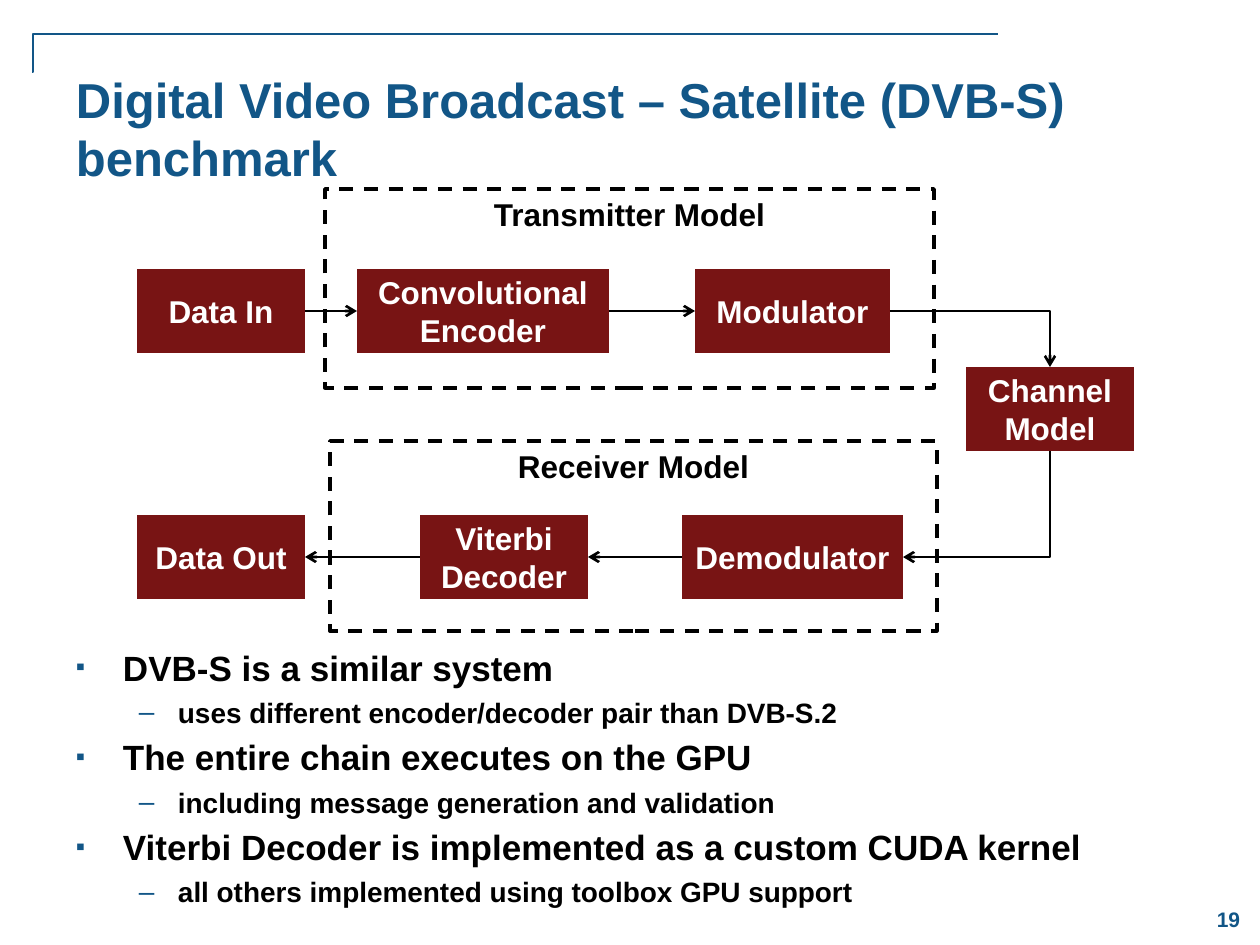
from lxml import etree
from pptx import Presentation, util as u
from pptx.dml.color import RGBColor
from pptx.enum import dml, shapes, text
from pptx.oxml.ns import qn

THEME = {
    "font": "Arial",
    "blue": "125687", "maroon": "781414", "black": "000000", "white": "FFFFFF",
    "title": 28, "block": 18, "bullet": 20, "sub_bullet": 16, "page": 12,
}
TITLE = "Digital Video Broadcast – Satellite (DVB-S) benchmark"
PAGE = "19"
POINTS = [
    ("DVB-S is a similar system", "uses different encoder/decoder pair than DVB-S.2"),
    ("The entire chain executes on the GPU", "including message generation and validation"),
    ("Viterbi Decoder is implemented as a custom CUDA kernel",
     "all others implemented using toolbox GPU support"),
]
BLOCK_H, SEND_Y, CHANNEL_Y, RECEIVE_Y = 84, 269, 367, 515
BLOCKS = {  # label: left, top, width
    "Demodulator": (682, RECEIVE_Y, 221),
    "Viterbi\nDecoder": (420, RECEIVE_Y, 168),
    "Convolutional\nEncoder": (357, SEND_Y, 252),
    "Channel\nModel": (966, CHANNEL_Y, 168),
    "Modulator": (695, SEND_Y, 195),
    "Data In": (137, SEND_Y, 168),
    "Data Out": (137, RECEIVE_Y, 168),
}
STRAIGHT_FLOWS = [
    ("Data In", "Convolutional\nEncoder"),
    ("Convolutional\nEncoder", "Modulator"),
    ("Demodulator", "Viterbi\nDecoder"),
    ("Viterbi\nDecoder", "Data Out"),
]
MODELS = {  # label: left, top, width, height
    "Transmitter Model": (325, 189, 609, 199),
    "Receiver Model": (330, 441, 607, 190),
}


def px(n):
    return u.Emu(round(n * 914400 / 126))


def color(name):
    return RGBColor.from_string(THEME[name])


def write(frame, lines, size, ink="black", align="LEFT", anchor="TOP", inset=(13, 6)):
    """Fill a text frame, one paragraph for each line."""
    frame.word_wrap = True
    frame.auto_size = text.MSO_AUTO_SIZE.NONE
    frame.vertical_anchor = text.MSO_ANCHOR[anchor]
    frame.margin_left = frame.margin_right = px(inset[0])
    frame.margin_top = frame.margin_bottom = px(inset[1])
    for i, line in enumerate(lines):
        paragraph = frame.paragraphs[0] if i == 0 else frame.add_paragraph()
        paragraph.alignment = text.PP_ALIGN[align]
        run = paragraph.add_run()
        run.text = line
        run.font.name, run.font.bold = THEME["font"], True
        run.font.size, run.font.color.rgb = u.Pt(THEME[size]), color(ink)


def place(shape, *box):
    shape.left, shape.top, shape.width, shape.height = map(px, box)


def bullet(paragraph, char, left, hang, percent):
    props = paragraph._p.get_or_add_pPr()
    props.set("marL", str(px(left)))
    props.set("indent", str(-px(hang)))
    tint = etree.SubElement(props, qn("a:buClr"))
    etree.SubElement(tint, qn("a:srgbClr")).set("val", THEME["blue"])
    etree.SubElement(props, qn("a:buSzPct")).set("val", str(percent * 1000))
    etree.SubElement(props, qn("a:buFont")).set("typeface", THEME["font"])
    etree.SubElement(props, qn("a:buChar")).set("char", char)


def connect(slide, start, end, kind="STRAIGHT", ink="black", weight=1.5, arrow=True):
    line = slide.shapes.add_connector(
        shapes.MSO_CONNECTOR[kind], *map(px, start + end))
    line.line.color.rgb, line.line.width = color(ink), u.Pt(weight)
    if arrow:
        etree.SubElement(line.line._get_or_add_ln(), qn("a:tailEnd")).set("type", "arrow")
    etree.SubElement(line._element.spPr, qn("a:effectLst"))
    return line


def turn_once(slide, start, end, down_first=False):
    """Arrow with one right-angle corner."""
    line = connect(slide, start, end, "ELBOW")
    line._element.spPr.find(qn("a:prstGeom")).set("prst", "bentConnector2")
    if down_first:  # a quarter turn about the centre swaps the two extents
        (x1, y1), (x2, y2) = start, end
        across, down = abs(x2 - x1), abs(y2 - y1)
        place(line, (x1 + x2 - down) / 2, (y1 + y2 - across) / 2, down, across)
        xfrm = line._element.spPr.find(qn("a:xfrm"))
        xfrm.attrib.pop("flipH", None)
        xfrm.set("rot", "5400000")


def side(label, right):
    left, top, width = BLOCKS[label]
    return left + width * right, top + BLOCK_H // 2


def add_frame(slide):
    rule = connect(slide, (998, 34), (32, 72), "ELBOW", "blue", 1, arrow=False)
    guides = rule._element.spPr.find(qn("a:prstGeom")).get_or_add_avLst()
    guide = etree.SubElement(guides, qn("a:gd"))
    guide.set("name", "adj1")
    guide.set("fmla", "val 99900")
    page = slide.shapes.add_textbox(*map(px, (1197, 893, 63, 53)))
    write(page.text_frame, [PAGE], "page", "blue", "CENTER", "MIDDLE")
    place(slide.shapes.title, 63, 63, 1113, 136)
    write(slide.shapes.title.text_frame, [TITLE], "title", "blue")


def add_diagram(slide):
    for label, (left, top, width) in BLOCKS.items():
        block = slide.shapes.add_shape(
            shapes.MSO_SHAPE.FLOWCHART_PROCESS, *map(px, (left, top, width, BLOCK_H)))
        block.shadow.inherit = False
        block.fill.solid()
        block.fill.fore_color.rgb = color("maroon")
        block.line.fill.background()
        write(block.text_frame, label.split("\n"), "block", "white", "CENTER", "MIDDLE",
              inset=(0, 0))
    for source, target in STRAIGHT_FLOWS:
        rightward = BLOCKS[source][0] < BLOCKS[target][0]
        connect(slide, side(source, rightward), side(target, not rightward))
    left, top, width = BLOCKS["Channel\nModel"]
    middle = left + width // 2
    turn_once(slide, side("Modulator", True), (middle, top))
    turn_once(slide, (middle, top + BLOCK_H), side("Demodulator", True), down_first=True)
    for label, box in MODELS.items():
        model = slide.shapes.add_shape(shapes.MSO_SHAPE.RECTANGLE, *map(px, box))
        model.shadow.inherit = False
        model.fill.background()
        model.line.color.rgb, model.line.width = color("black"), u.Pt(2)
        model.line.dash_style = dml.MSO_LINE.DASH
        write(model.text_frame, [label], "block", align="CENTER")


def add_points(slide):
    body = slide.placeholders[1]
    place(body, 63, 640, 1134, 284)
    write(body.text_frame, [line for pair in POINTS for line in pair], "bullet")
    for i, paragraph in enumerate(body.text_frame.paragraphs):
        size = "sub_bullet" if i % 2 else "bullet"
        paragraph.level = i % 2
        paragraph.line_spacing = 1.05 if i % 2 else 1.0
        paragraph.space_before = u.Pt(THEME[size] * 0.2 if i else 0)
        paragraph.runs[0].font.size = u.Pt(THEME[size])
        bullet(paragraph, *(("–", 102, 39, 100) if i % 2 else ("▪", 47, 47, 75)))


def main():
    deck = Presentation()
    deck.slide_width, deck.slide_height = px(1260), px(945)
    slide = deck.slides.add_slide(deck.slide_layouts[1])
    add_frame(slide)
    add_diagram(slide)
    add_points(slide)
    deck.save("out.pptx")


if __name__ == "__main__":
    main()
